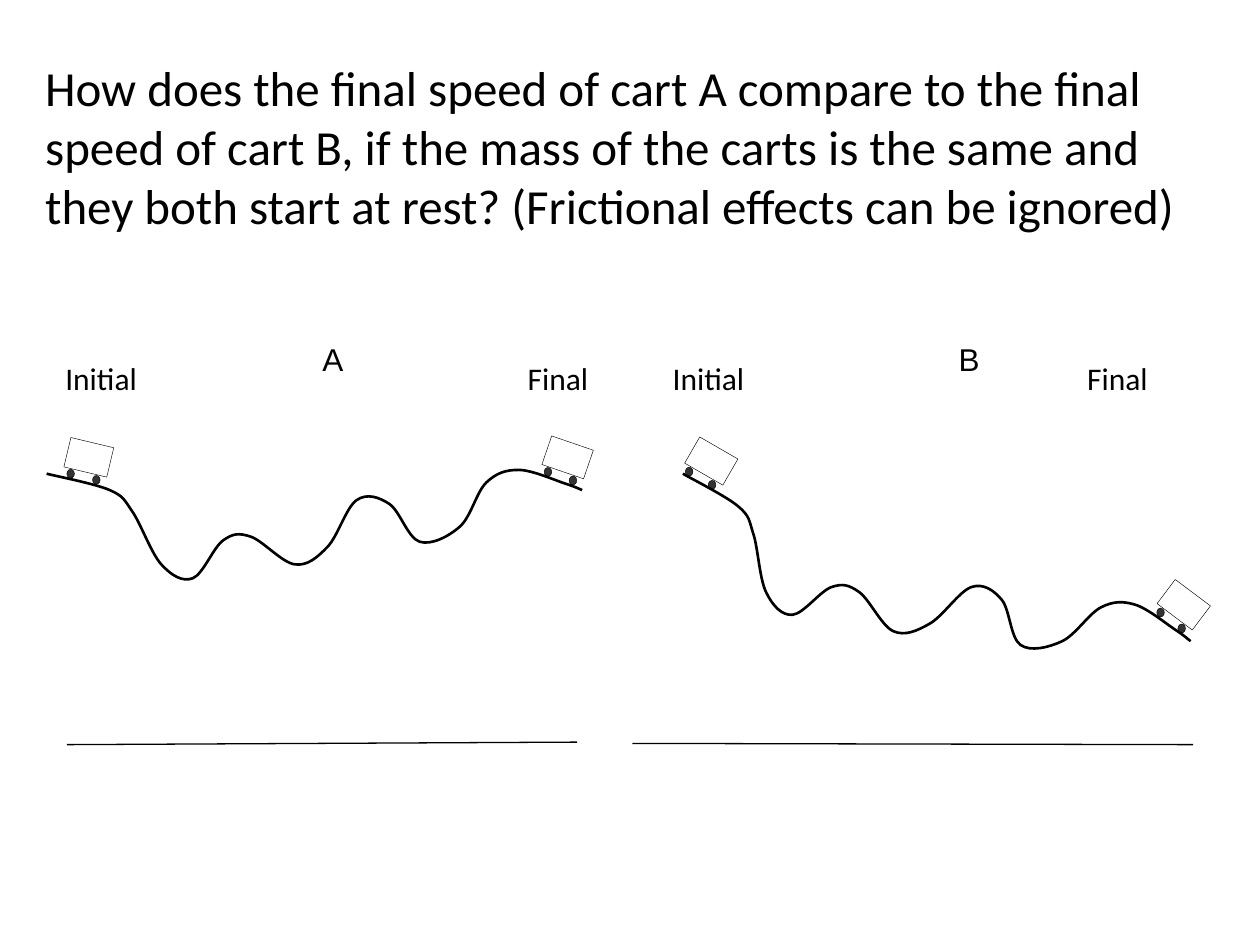
from math import cos, radians, sin

from lxml import etree
from pptx import Presentation
from pptx.dml.color import RGBColor
from pptx.enum.shapes import MSO_CONNECTOR, MSO_SHAPE
from pptx.oxml.ns import qn
from pptx.util import Inches, Pt

RECTANGLE, OVAL = MSO_SHAPE.RECTANGLE, MSO_SHAPE.OVAL
STRAIGHT = MSO_CONNECTOR.STRAIGHT

# Content: lengths in inches
SLIDE_SIZE = (10, 7.5)
QUESTION = (
    "How does the final speed of cart A compare to the final speed of cart B, "
    "if the mass of the carts is the same and they both start at rest? "
    "(Frictional effects can be ignored)"
)
QUESTION_BOX = (0.26, 0.41, 9.49, 1.51)
LETTER_TOP, STATE_TOP, LABEL_HEIGHT = 2.65, 2.8, 0.4

# labels: left, width; carts: centre x, centre y, tilt in degrees
SCENES = [
    {
        "letter": ("A", 2.46, 0.5),
        "states": [("Initial", 0.42, 1.05), ("Final", 4.09, 0.93)],
        "ground": ((4.58, 5.89), (0.53, 5.91)),
        "track": [
            (0.37, 3.76), (0.87, 3.89), (1.05, 4.06), (1.28, 4.48), (1.53, 4.59),
            (1.77, 4.29), (1.99, 4.26), (2.34, 4.48), (2.6, 4.34), (2.83, 3.97),
            (3.09, 4), (3.33, 4.3), (3.65, 4.18), (3.86, 3.83), (4.12, 3.73),
            (4.49, 3.84), (4.62, 3.89),
        ],
        "carts": [(0.705, 3.63, 13.4), (4.505, 3.63, 18.9)],
    },
    {
        "letter": ("B", 7.51, 0.3),
        "states": [("Initial", 5.24, 0.88), ("Final", 8.53, 0.98)],
        "ground": ((9.47, 5.91), (5.02, 5.9)),
        "track": [
            (5.42, 3.76), (5.86, 4.02), (5.98, 4.24), (6.08, 4.7), (6.29, 4.88),
            (6.6, 4.66), (6.82, 4.7), (7.09, 5.01), (7.38, 4.95), (7.71, 4.66),
            (7.95, 4.76), (8.1, 5.12), (8.43, 5.09), (8.74, 4.82), (9.01, 4.8),
            (9.33, 5), (9.45, 5.09),
        ],
        "carts": [(5.645, 3.66, 30), (9.395, 4.8, 36.9)],
    },
]
CART_SIZE, WHEEL_SIZE = (0.35, 0.24), (0.06, 0.07)
WHEEL_OFFSETS = [(-0.11, 0.16), (0.1, 0.16)]  # from the cart's centre, before tilting

THEME = {
    "ink": RGBColor(0, 0, 0),
    "paper": RGBColor(255, 255, 255),
    "wheel_opacity": 80,
    "text_font": "Calibri",
    "letter_font": "Arial",
    "question_size": 28,
    "label_size": 18,
    "track_width": 1.5,
    "ground_width": 0.75,
    "cart_width": 0.25,
}


def set_line(shape, width):
    shape.line.color.rgb = THEME["ink"]
    shape.line.width = Pt(width)


def add_text(slide, text, box, size, font):
    frame = slide.shapes.add_textbox(*map(Inches, box)).text_frame
    frame.word_wrap = True
    frame.text = text
    run_font = frame.paragraphs[0].runs[0].font
    run_font.name, run_font.size = font, Pt(size)
    run_font.color.rgb = THEME["ink"]


def add_ground(slide, start, end):
    line = slide.shapes.add_connector(STRAIGHT, *map(Inches, start + end))
    set_line(line, THEME["ground_width"])
    etree.SubElement(line._element.spPr, qn("a:effectLst"))


def add_track(slide, knots):
    """Draw a smooth open curve through the knots (Catmull-Rom as Bezier)."""
    points = [tuple(map(Inches, knot)) for knot in knots]
    builder = slide.shapes.build_freeform(*points[0])
    builder.add_line_segments(points[1:], close=False)
    shape = builder.convert_to_shape()
    shape.shadow.inherit = False
    shape.fill.background()
    set_line(shape, THEME["track_width"])

    local = [(int(point.get("x")), int(point.get("y")))
             for point in shape._element.iter(qn("a:pt"))]
    padded = [local[0], *local, local[-1]]
    segments = list(shape._element.iter(qn("a:lnTo")))
    for segment, before, start, end, after in zip(
            segments, padded, padded[1:], padded[2:], padded[3:]):
        first = [s + (e - b) / 6 for b, s, e in zip(before, start, end)]
        second = [e - (a - s) / 6 for s, e, a in zip(start, end, after)]
        curve = etree.Element(qn("a:cubicBezTo"))
        for x, y in (first, second, end):
            etree.SubElement(curve, qn("a:pt"), x=str(round(x)), y=str(round(y)))
        segment.getparent().replace(segment, curve)


def add_part(slide, kind, center, size, color):
    corner = [c - length / 2 for c, length in zip(center, size)]
    shape = slide.shapes.add_shape(kind, *map(Inches, (*corner, *size)))
    shape.shadow.inherit = False
    shape.fill.solid()
    shape.fill.fore_color.rgb = color
    set_line(shape, THEME["cart_width"])
    return shape


def add_cart(slide, x, y, tilt):
    body = add_part(slide, RECTANGLE, (x, y), CART_SIZE, THEME["paper"])
    body.rotation = tilt
    cosine, sine = cos(radians(tilt)), sin(radians(tilt))
    for across, down in WHEEL_OFFSETS:
        center = (x + across * cosine - down * sine, y + across * sine + down * cosine)
        wheel = add_part(slide, OVAL, center, WHEEL_SIZE, THEME["ink"])
        color = wheel._element.spPr.find(qn("a:solidFill"))[0]
        etree.SubElement(color, qn("a:alpha"), val=str(THEME["wheel_opacity"] * 1000))


def main():
    presentation = Presentation()
    presentation.slide_width, presentation.slide_height = map(Inches, SLIDE_SIZE)
    slide = presentation.slides.add_slide(presentation.slide_layouts[6])

    # Question
    add_text(slide, QUESTION, QUESTION_BOX, THEME["question_size"], THEME["text_font"])

    # One scene per cart: labels, ground, track, start and end positions
    for scene in SCENES:
        labels = [(scene["letter"], LETTER_TOP, THEME["letter_font"])]
        labels += [(state, STATE_TOP, THEME["text_font"]) for state in scene["states"]]
        for (text, left, width), top, font in labels:
            add_text(slide, text, (left, top, width, LABEL_HEIGHT),
                     THEME["label_size"], font)
        add_ground(slide, *scene["ground"])
        add_track(slide, scene["track"])
        for cart in scene["carts"]:
            add_cart(slide, *cart)

    presentation.save("out.pptx")


if __name__ == "__main__":
    main()
